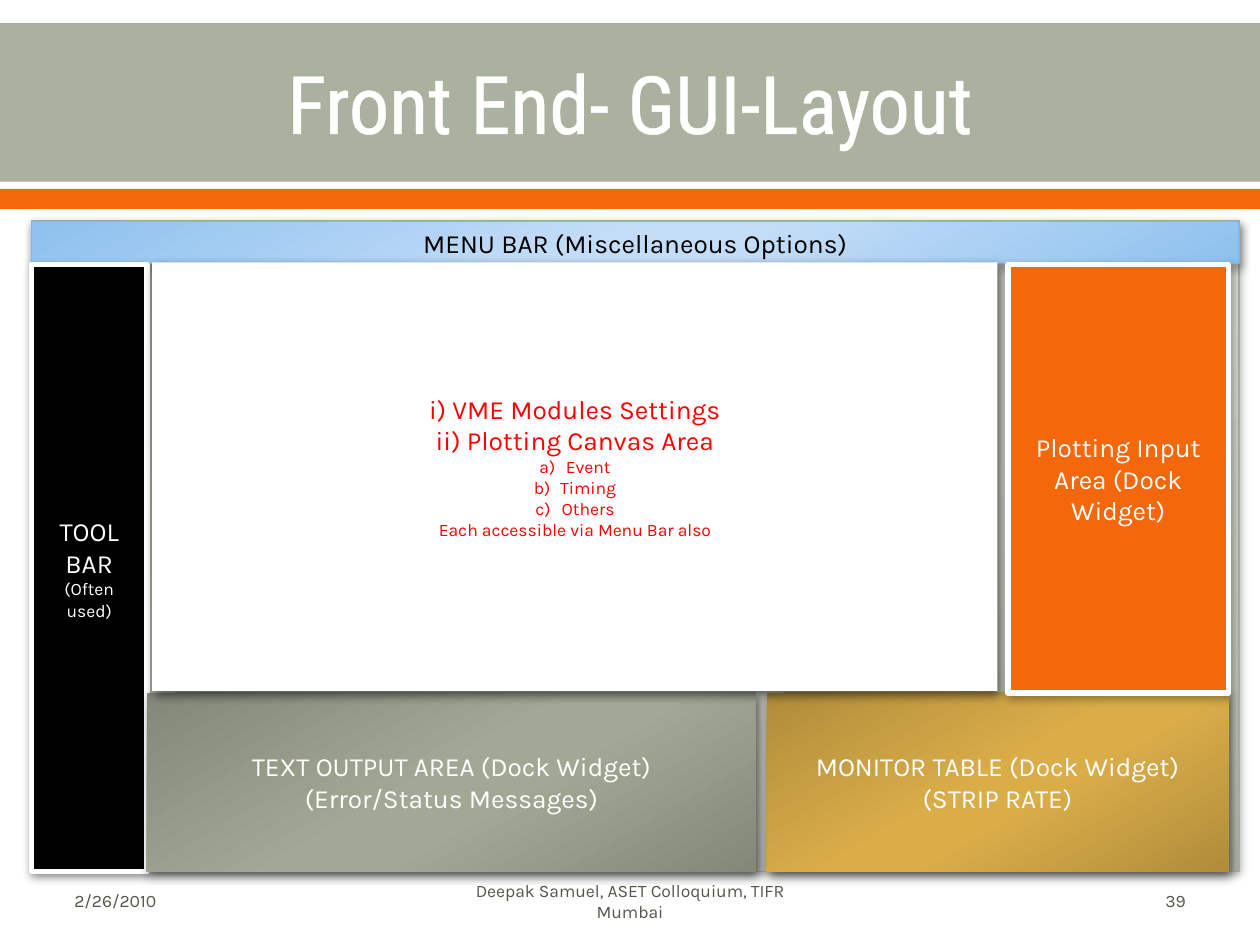
from lxml.etree import SubElement
from pptx import Presentation
from pptx.dml.color import RGBColor
from pptx.enum.shapes import MSO_SHAPE
from pptx.enum.text import MSO_ANCHOR, PP_ALIGN
from pptx.oxml.ns import qn
from pptx.util import Inches, Pt

BODY, HEADING = "Karla", "Roboto Condensed"
WHITE, BLACK, RED, ORANGE, SAGE, GRAY = "FFFFFF", "000000", "FF0000", "F4680B", "ABB19F", "55554A"
SOFT, DEEP = (30, 5, 2), (60, 6, 3)


def color(value):
    """Turn a hex string into a colour."""
    return RGBColor.from_string(value)


def add_child(parent, tag, **attributes):
    """Append a drawing element with its attributes."""
    values = {name: str(value) for name, value in attributes.items()}
    return SubElement(parent, qn(f"a:{tag}"), values)


def write(para, text, size=15, font=BODY, ink=WHITE, align=PP_ALIGN.CENTER, outline=0, numbered=False):
    """Write one formatted line into a paragraph."""
    para.alignment = align
    span = para.add_run()
    span.text = text
    span.font.size, span.font.name = Pt(size), font
    span.font.color.rgb = color(ink)
    if outline:
        properties = span._r.get_or_add_rPr()
        line = add_child(properties, "ln", w=Pt(outline))
        add_child(add_child(line, "solidFill"), "srgbClr", val=ink)
        properties.insert(0, line)
    if numbered:
        properties = para._p.get_or_add_pPr()
        properties.set("marL", str(Inches(0.21)))
        properties.set("indent", str(Inches(-0.21)))
        add_child(properties, "buFont", typeface="+mj-lt")
        add_child(properties, "buAutoNum", type="alphaLcParenR")


class LayoutSlide:
    """Hold the style and the current slide on a 120 by 90 grid."""

    columns, rows = 120, 90

    def __init__(self, deck):
        """Add a blank page to the deck."""
        self.page = deck.slides.add_slide(deck.slide_layouts[6])
        self.cell_width = deck.slide_width / self.columns
        self.cell_height = deck.slide_height / self.rows

    def place(self, left, top, width, height):
        """Convert grid cells to lengths."""
        return (round(left * self.cell_width), round(top * self.cell_height),
                round(width * self.cell_width), round(height * self.cell_height))

    def fill_text(self, box, lines, bottom=0.04, **style):
        """Set the lines of a box, each as text or as text with its own format."""
        frame = box.text_frame
        frame.word_wrap, frame.vertical_anchor = True, MSO_ANCHOR.MIDDLE
        frame.margin_left = frame.margin_right = Inches(0.09)
        frame.margin_top, frame.margin_bottom = Inches(0.04), Inches(bottom)
        for index, line in enumerate(lines):
            text, own = (line, {}) if isinstance(line, str) else line
            para = frame.add_paragraph() if index else frame.paragraphs[0]
            write(para, text, **{**style, **own})

    def label(self, area, text, **style):
        """Add a text box."""
        self.fill_text(self.page.shapes.add_textbox(*self.place(*area)), [text], **style)

    def panel(self, area, fill, lines=(), border=None, shadow=None, **style):
        """Add a rectangle with a plain fill or an edge and middle gradient."""
        box = self.page.shapes.add_shape(MSO_SHAPE.RECTANGLE, *self.place(*area))
        if isinstance(fill, str):
            box.fill.solid()
            box.fill.fore_color.rgb = color(fill)
        else:
            self.blend(box, *fill)
        if border:
            box.line.color.rgb, box.line.width = color(border[0]), Pt(border[1])
        else:
            box.line.fill.background()
        box.shadow.inherit = False
        if shadow:
            self.cast(box, *shadow)
        if lines:
            self.fill_text(box, lines, **style)

    def blend(self, box, edge, middle):
        """Fill a box with a slanted gradient that is lighter in the middle."""
        box.fill.gradient()
        box.fill.gradient_angle = 300
        stops = box._element.spPr.find(".//" + qn("a:gsLst"))
        stops.clear()
        for share, value in ((0, edge), (48, middle), (58, middle), (100, edge)):
            add_child(add_child(stops, "gs", pos=share * 1000), "srgbClr", val=value)

    def cast(self, box, opacity, blur, distance):
        """Give a box a soft black shadow."""
        effects = box._element.spPr.find(qn("a:effectLst"))
        shade = add_child(effects, "outerShdw", blurRad=Pt(blur), dist=Pt(distance),
                          dir=60 * 60000, rotWithShape=0)
        add_child(add_child(shade, "srgbClr", val=BLACK), "alpha", val=opacity * 1000)


def main():
    """Build the slide and save it."""
    deck = Presentation()
    deck.slide_width, deck.slide_height = Inches(10), Inches(7.5)
    slide = LayoutSlide(deck)

    slide.panel((0, 2.2, 120, 15.1), SAGE)
    slide.panel((0, 18, 120, 1.9), ORANGE)
    slide.label((6, 2.4, 108, 14.6), "Front End- GUI-Layout", size=46, font=HEADING, outline=1.1)

    footers = ((6, 28, "2/26/2010", PP_ALIGN.LEFT),
               (41, 38, "Deepak Samuel, ASET Colloquium, TIFR Mumbai", PP_ALIGN.CENTER),
               (86, 28, "39", PP_ALIGN.RIGHT))
    for left, width, text, align in footers:
        slide.label((left, 83.4, width, 4.8), text, size=10, ink=GRAY, align=align)

    slide.panel((3, 21, 115, 62), ("B6BCAB", "D8DBD3"), border=(SAGE, 0.79), shadow=SOFT)
    slide.panel((3, 21.1, 115, 4), ("8EC1EE", "C4DDF7"), ["MENU BAR (Miscellaneous Options)"],
                border=("7EB8E7", 0.79), shadow=SOFT, ink=BLACK)
    slide.panel((3, 25.2, 11, 57.8), BLACK, ["TOOL BAR", ("(Often used)", {"size": 10})],
                border=(WHITE, 3), shadow=SOFT)
    slide.panel((14, 66, 58, 17), ("838879", "A2A896"),
                ["TEXT OUTPUT AREA (Dock Widget)", "(Error/Status Messages)"], shadow=DEEP)
    slide.panel((73, 66, 44, 17), ("B08C3B", "DAAD49"),
                ["MONITOR TABLE (Dock Widget)", "(STRIP RATE)"], shadow=DEEP)
    views = [(text, {"size": 10, "numbered": True}) for text in ("Event", "Timing", "Others")]
    slide.panel((14.5, 25, 80.5, 40.8), WHITE,
                ["i) VME Modules Settings", "ii) Plotting Canvas Area", *views,
                 ("Each accessible via Menu Bar also", {"size": 10})],
                shadow=DEEP, ink=RED, bottom=0.2)
    slide.panel((96, 25.2, 21, 40.8), ORANGE, ["Plotting Input Area (Dock Widget)"],
                border=(WHITE, 3), shadow=SOFT)

    deck.save("out.pptx")


if __name__ == "__main__":
    main()
